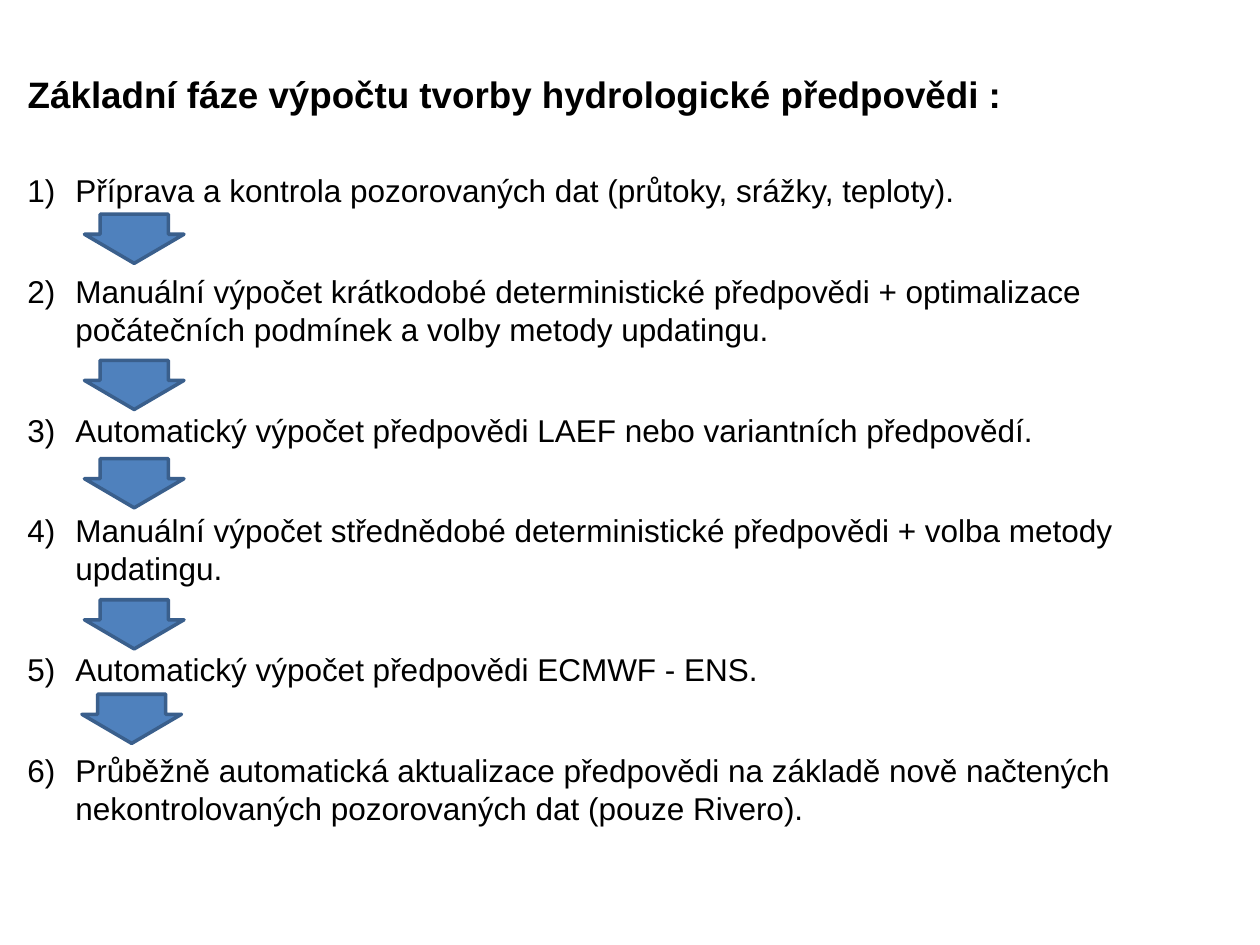
from lxml.etree import SubElement
from pptx import Presentation
from pptx.dml.color import RGBColor
from pptx.enum.shapes import MSO_SHAPE
from pptx.enum.text import MSO_ANCHOR, PP_ALIGN
from pptx.oxml.ns import qn
from pptx.util import Inches, Pt

SLIDE_WIDTH, SLIDE_HEIGHT = Inches(10), Inches(7.5)
COLUMN, ROW = SLIDE_WIDTH / 100, SLIDE_HEIGHT / 75

FONT = "Arial"
BLACK, BLUE, DARK_BLUE = "000000", "4F81BD", "3A5F8C"
INDENT = Inches(0.38)

TITLE = "Základní fáze výpočtu tvorby hydrologické předpovědi :"
PHASES = [
    "Příprava a kontrola pozorovaných dat (průtoky, srážky, teploty).",
    "Manuální výpočet krátkodobé deterministické předpovědi + optimalizace "
    "počátečních podmínek a volby metody updatingu.",
    "Automatický výpočet předpovědi LAEF nebo variantních předpovědí.",
    "Manuální výpočet střednědobé deterministické předpovědi + volba metody updatingu.",
    "Automatický výpočet předpovědi ECMWF - ENS.",
    "Průběžně automatická aktualizace předpovědi na základě nově načtených "
    "nekontrolovaných pozorovaných dat (pouze Rivero).",
]

# Left column and top row of the arrow after each phase but the last
ARROW_PLACES = [(6.7, 17), (6.7, 28.6), (6.7, 36.4), (6.7, 47.6), (6.5, 55.1)]
ARROW_SIZE = (7.9, 3.9)


def color(hex_string):
    return RGBColor.from_string(hex_string)


def grid_box(left, top, width, height):
    """Turn columns and rows of the slide grid into lengths."""
    return [round(length) for length in
            (left * COLUMN, top * ROW, width * COLUMN, height * ROW)]


def add_text(paragraph, text, size, bold=False):
    run = paragraph.add_run()
    run.text = text
    run.font.name = FONT
    run.font.size = Pt(size)
    run.font.bold = bold
    run.font.color.rgb = color(BLACK)


def number_paragraph(paragraph):
    """Give the paragraph a hanging indent and an automatic number."""
    properties = paragraph._p.get_or_add_pPr()
    properties.set("marL", str(INDENT))
    properties.set("indent", str(-INDENT))
    SubElement(properties, qn("a:buFont"), typeface=FONT)
    SubElement(properties, qn("a:buAutoNum"), type="arabicParenR")


def place_title(slide, box):
    title = slide.shapes.title
    title.left, title.top, title.width, title.height = box
    frame = title.text_frame
    frame.word_wrap = True
    frame.vertical_anchor = MSO_ANCHOR.TOP
    paragraph = frame.paragraphs[0]
    paragraph.alignment = PP_ALIGN.LEFT
    add_text(paragraph, TITLE, 21, bold=True)


def add_phases(slide, box):
    frame = slide.shapes.add_textbox(*box).text_frame
    frame.word_wrap = True
    for index, phase in enumerate(PHASES):
        paragraph = frame.add_paragraph() if index else frame.paragraphs[0]
        number_paragraph(paragraph)
        if index:
            paragraph.space_before = Pt(36)
        add_text(paragraph, phase, 18)


def add_arrow(slide, box):
    arrow = slide.shapes.add_shape(MSO_SHAPE.DOWN_ARROW, *box)
    arrow.adjustments[0] = 0.685
    arrow.adjustments[1] = 0.592
    arrow.shadow.inherit = False
    arrow.fill.solid()
    arrow.fill.fore_color.rgb = color(BLUE)
    arrow.line.color.rgb = color(DARK_BLUE)
    arrow.line.width = Pt(2)


def main():
    presentation = Presentation()
    presentation.slide_width, presentation.slide_height = SLIDE_WIDTH, SLIDE_HEIGHT
    slide = presentation.slides.add_slide(presentation.slide_layouts.get_by_name("Title Only"))
    place_title(slide, grid_box(1.2, 5.2, 91.3, 4.5))
    add_phases(slide, grid_box(1.2, 13.1, 89, 53.5))
    for place in ARROW_PLACES:
        add_arrow(slide, grid_box(*place, *ARROW_SIZE))
    presentation.save("out.pptx")


if __name__ == "__main__":
    main()
